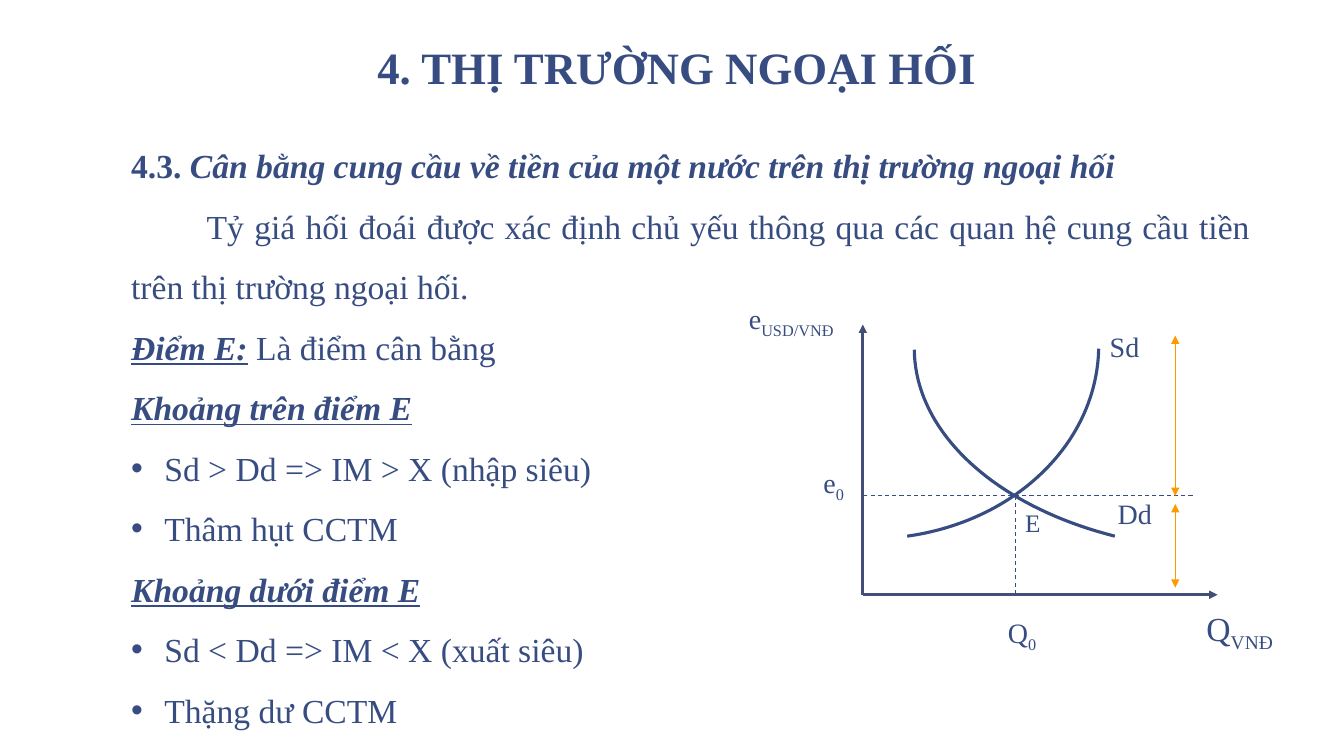
from pptx import Presentation, util as u
from pptx.dml.color import RGBColor
from pptx.enum import dml, shapes, text
from pptx.oxml.ns import qn
from lxml import etree

NAVY = RGBColor(0x37, 0x4C, 0x81)
SLATE = RGBColor(0x41, 0x4E, 0x77)
ORANGE = RGBColor(0xFF, 0x99, 0x00)

prs = Presentation()
prs.slide_width, prs.slide_height = u.Inches(13.33), u.Inches(7.5)
s = prs.slides.add_slide(prs.slide_layouts[5])


def at(*shares):
    """Turn percentages, alternately of slide width and height, into lengths."""
    sides = (prs.slide_width, prs.slide_height)
    return [int(v * sides[i % 2] / 100) for i, v in enumerate(shares)]


def add_run(p, words, size, **fmt):
    r = p.add_run()
    r.text = words
    r.font.color.rgb = NAVY
    if "baseline" in fmt:
        r._r.get_or_add_rPr().set("baseline", str(fmt.pop("baseline")))
    for name, value in {"name": "Times New Roman", "size": u.Pt(size), **fmt}.items():
        setattr(r.font, name, value)


# Title and body text
title = s.shapes.title
body = s.shapes.add_textbox(*at(8.78, 15.6, 85.2, 67.07))
title.left, title.top, title.width, title.height = at(8.7, 0, 83.3, 13.33)
frame = {"word_wrap": True, "auto_size": text.MSO_AUTO_SIZE.NONE,
         "margin_left": u.Inches(0.13), "margin_right": u.Inches(0.13),
         "margin_top": u.Inches(0.07), "margin_bottom": u.Inches(0.07)}
for sp, anchor in ((title, text.MSO_ANCHOR.BOTTOM), (body, text.MSO_ANCHOR.TOP)):
    for name, value in {**frame, "vertical_anchor": anchor}.items():
        setattr(sp.text_frame, name, value)

p = title.text_frame.paragraphs[0]
p.alignment, p.line_spacing = text.PP_ALIGN.CENTER, 1.5
add_run(p, "4. THỊ TRƯỜNG NGOẠI HỐI", 32, bold=True)

BOLD = {"bold": True}
SLANTED = {"bold": True, "italic": True}
HEADING = {**SLANTED, "underline": True}
paragraphs = [
    ("plain", [("4.3. ", BOLD),
               ("Cân bằng cung cầu về tiền của một nước trên thị trường ngoại hối", SLANTED)]),
    ("justified", [("Tỷ giá hối đoái được xác định chủ yếu thông qua các quan hệ "
                    "cung cầu tiền trên thị trường ngoại hối.", {})]),
    ("plain", [("Điểm E:", HEADING), (" Là điểm cân bằng", {})]),
    ("plain", [("Khoảng trên điểm E", HEADING)]),
    ("bullet", [("Sd > Dd => IM > X (nhập siêu)", {})]),
    ("bullet", [("Thâm hụt CCTM", {})]),
    ("plain", [("Khoảng dưới điểm E", HEADING)]),
    ("bullet", [("Sd < Dd => IM < X (xuất siêu)", {})]),
    ("bullet", [("Thặng dư CCTM", {})]),
]
indents = {"plain": (0, 0), "justified": (0, 0.75), "bullet": (0.33, -0.33)}
tf = body.text_frame
for i, (kind, runs) in enumerate(paragraphs):
    p = tf.add_paragraph() if i else tf.paragraphs[0]
    p.line_spacing = 1.5
    if kind == "justified":
        p.alignment = text.PP_ALIGN.JUSTIFY
    pPr = p._p.get_or_add_pPr()
    for name, inches in zip(("marL", "indent"), indents[kind]):
        pPr.set(name, str(u.Inches(inches)))
    if kind == "bullet":
        etree.SubElement(pPr, qn("a:buFont")).set("typeface", "Arial")
        etree.SubElement(pPr, qn("a:buChar")).set("char", "•")
    for words, fmt in runs:
        add_run(p, words, 24, **fmt)

# Demand and supply: cubic curves given by four control points
STEPS = 40
curves = [
    [(82.95, 70.93), (74.03, 66.93), (68.1, 57.2), (68.03, 46.27)],
    [(67.5, 70.93), (75.6, 68.93), (81.6, 58.53), (81.75, 46.13)],
]
for controls in curves:
    points = []
    for step in range(STEPS + 1):
        t = step / STEPS
        weights = ((1 - t) ** 3, 3 * t * (1 - t) ** 2, 3 * t * t * (1 - t), t ** 3)
        points.append(at(*(sum(w * c[k] for w, c in zip(weights, controls))
                           for k in (0, 1))))
    builder = s.shapes.build_freeform(*points[0])
    builder.add_line_segments(points[1:], close=False)
    sp = builder.convert_to_shape()
    sp.shadow.inherit = False
    sp.fill.background()
    sp.line.color.rgb, sp.line.width = NAVY, u.Pt(2.25)

# Axes, guides through E, and the ranges above and below E
AXIS_X, AXIS_Y = 64.2, 78.67
E_X, E_Y = 75.53, 65.6
RANGE_X = 87.45
lines = [
    ((E_X, E_Y, E_X, AXIS_Y), NAVY, 0.75, True, ()),
    ((88.73, E_Y, AXIS_X, E_Y), NAVY, 0.75, True, ()),
    ((RANGE_X, 44.4, RANGE_X, E_Y), ORANGE, 0.75, False, ("headEnd", "tailEnd")),
    ((RANGE_X, 66.67, RANGE_X, 77.73), ORANGE, 0.75, False, ("headEnd", "tailEnd")),
    ((AXIS_X, AXIS_Y, AXIS_X, 42.93), SLATE, 2, False, ("tailEnd",)),
    ((AXIS_X, AXIS_Y, 90.6, AXIS_Y), SLATE, 2, False, ("tailEnd",)),
]
for ends, color, width, dashed, heads in lines:
    c = s.shapes.add_connector(shapes.MSO_CONNECTOR.STRAIGHT, *at(*ends))
    c.line.color.rgb, c.line.width = color, u.Pt(width)
    if dashed:
        c.line.dash_style = dml.MSO_LINE.DASH
    for head in heads:
        etree.SubElement(c.line._ln, qn("a:" + head)).set("type", "triangle")
    etree.SubElement(c._element.spPr, qn("a:effectLst"))

# Chart labels: position, width, size, letter, subscript
labels = [
    (74.25, 80.7, 4.43, 20, "Q", "0"),
    (89.03, 79.73, 9.38, 24, "Q", "VNĐ"),
    (60.53, 60.93, 3.68, 20, "e", "0"),
    (E_X, 66.4, 4.95, 18, "E", ""),
    (82.43, 65.07, 4.95, 20, "Dd", ""),
    (81.83, 42.93, 4.95, 20, "Sd", ""),
    (54.98, 39.2, 8.85, 20, "e", "USD/VNĐ"),
]
for x, y, width, size, letter, sub in labels:
    tf = s.shapes.add_textbox(*at(x, y, width, 5.73)).text_frame
    tf.word_wrap = True
    add_run(tf.paragraphs[0], letter, size)
    if sub:
        add_run(tf.paragraphs[0], sub, size, baseline=-25000)

prs.save("out.pptx")
